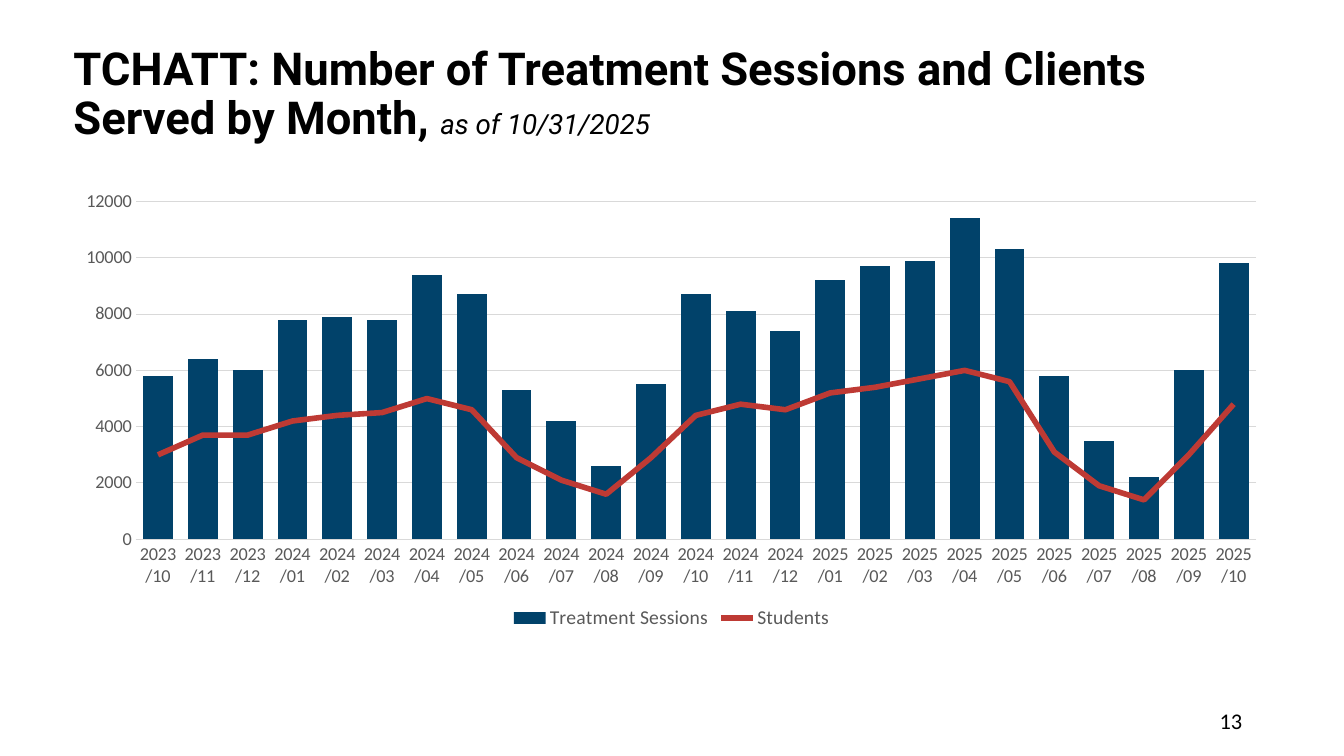
from lxml.etree import SubElement
from pptx import Presentation
from pptx.chart.data import CategoryChartData
from pptx.dml.color import RGBColor
from pptx.enum.chart import XL_CHART_TYPE, XL_LEGEND_POSITION, XL_MARKER_STYLE, XL_TICK_MARK
from pptx.enum.text import MSO_ANCHOR, PP_ALIGN
from pptx.oxml import parse_xml
from pptx.oxml.ns import nsdecls, qn
from pptx.util import Inches, Pt

BLACK = RGBColor(0x00, 0x00, 0x00)
GREY = RGBColor(0x59, 0x59, 0x59)
LIGHT_GREY = RGBColor(0xD9, 0xD9, 0xD9)
NAVY = RGBColor(0x01, 0x42, 0x6A)
RED = RGBColor(0xBE, 0x3A, 0x34)

MONTHS = [f"{year}/{month:02d}" for year in (2023, 2024, 2025)
          for month in range(10 if year == 2023 else 1, 11 if year == 2025 else 13)]
SESSIONS = [5800, 6400, 6000, 7800, 7900, 7800, 9400, 8700, 5300, 4200, 2600, 5500, 8700,
            8100, 7400, 9200, 9700, 9900, 11400, 10300, 5800, 3500, 2200, 6000, 9800]
STUDENTS = [3000, 3700, 3700, 4200, 4400, 4500, 5000, 4600, 2900, 2100, 1600, 2900, 4400,
            4800, 4600, 5200, 5400, 5700, 6000, 5600, 3100, 1900, 1400, 3000, 4800]


def set_font(font, name, size, color):
    font.name = name
    font.size = Pt(size)
    font.color.rgb = color


def add_run(paragraph, text, name="Calibri", size=16, color=BLACK, bold=False, italic=False):
    run = paragraph.add_run()
    run.text = text
    set_font(run.font, name, size, color)
    run.font.bold = bold
    run.font.italic = italic


def add_text_box(slide, left, top, width, height, align=PP_ALIGN.LEFT):
    shape = slide.shapes.add_textbox(Inches(left), Inches(top), Inches(width), Inches(height))
    frame = shape.text_frame
    frame.word_wrap = True
    frame.vertical_anchor = MSO_ANCHOR.MIDDLE
    paragraph = frame.paragraphs[0]
    paragraph.alignment = align
    return paragraph


def move_last_series_to_line(chart):
    bar_chart = chart.plots[0]._element
    line_chart = parse_xml(
        f'<c:lineChart {nsdecls("c")}><c:grouping val="standard"/>'
        '<c:varyColors val="0"/></c:lineChart>')
    series = bar_chart.findall(qn("c:ser"))[-1]
    for invert in series.findall(qn("c:invertIfNegative")):
        series.remove(invert)
    line_chart.append(series)
    SubElement(line_chart, qn("c:marker")).set("val", "1")
    for axis_id in bar_chart.findall(qn("c:axId")):
        SubElement(line_chart, qn("c:axId")).set("val", axis_id.get("val"))
    bar_chart.addnext(line_chart)


def set_plot_area(chart, **fractions):
    plot_area = chart.plots[0]._element.getparent()
    for layout in plot_area.findall(qn("c:layout")):
        plot_area.remove(layout)
    layout = parse_xml(f'<c:layout {nsdecls("c")}/>')
    manual = SubElement(layout, qn("c:manualLayout"))
    settings = {"layoutTarget": "inner", "xMode": "edge", "yMode": "edge", **fractions}
    for name, value in settings.items():
        SubElement(manual, qn(f"c:{name}")).set("val", str(value))
    plot_area.insert(0, layout)


def style_axes(chart):
    for axis in (chart.category_axis, chart.value_axis):
        axis.major_tick_mark = XL_TICK_MARK.NONE
        axis.minor_tick_mark = XL_TICK_MARK.NONE
        set_font(axis.tick_labels.font, "Calibri", 13, GREY)
    chart.value_axis.minimum_scale = 0
    chart.value_axis.maximum_scale = 12000
    chart.value_axis.major_unit = 2000
    chart.value_axis.format.line.fill.background()
    for line in (chart.category_axis.format.line, chart.value_axis.major_gridlines.format.line):
        line.color.rgb = LIGHT_GREY
        line.width = Pt(0.75)


def add_sessions_chart(slide):
    data = CategoryChartData(number_format="General")
    data.categories = MONTHS
    data.add_series("Treatment Sessions", SESSIONS)
    data.add_series("Students", STUDENTS)
    chart = slide.shapes.add_chart(
        XL_CHART_TYPE.COLUMN_STACKED,
        Inches(0.62), Inches(1.82), Inches(12.08), Inches(4.47), data).chart
    set_font(chart.font, "Calibri", 10, BLACK)
    chart.has_title = False
    move_last_series_to_line(chart)
    set_plot_area(chart, x=0.06, y=0.04, w=0.92, h=0.75)
    style_axes(chart)

    columns, lines = chart.plots
    columns.gap_width = 50
    columns.overlap = 100
    columns.vary_by_categories = False
    sessions = columns.series[0]
    sessions.format.fill.solid()
    sessions.format.fill.fore_color.rgb = NAVY
    students = lines.series[0]
    students.smooth = False
    students.marker.style = XL_MARKER_STYLE.NONE
    students.format.line.color.rgb = RED
    students.format.line.width = Pt(4)

    chart.has_legend = True
    chart.legend.position = XL_LEGEND_POSITION.BOTTOM
    chart.legend.include_in_layout = False
    set_font(chart.legend.font, "Calibri", 14, GREY)


def main():
    presentation = Presentation()
    presentation.slide_width = Inches(13.33)
    presentation.slide_height = Inches(7.5)
    slide = presentation.slides.add_slide(presentation.slide_layouts[6])

    title = add_text_box(slide, 0.63, 0.48, 12.08, 0.94)
    title.line_spacing = 0.9
    add_run(title, "TCHATT: Number of Treatment Sessions and Clients Served by Month, ",
            name="Roboto", size=32.4, bold=True)
    add_run(title, "as of 10/31/2025", name="Roboto", size=19.8, italic=True)

    add_sessions_chart(slide)

    page_number = add_text_box(slide, 9.42, 6.95, 3, 0.4, align=PP_ALIGN.RIGHT)
    add_run(page_number, "13")
    presentation.save("out.pptx")


if __name__ == "__main__":
    main()
